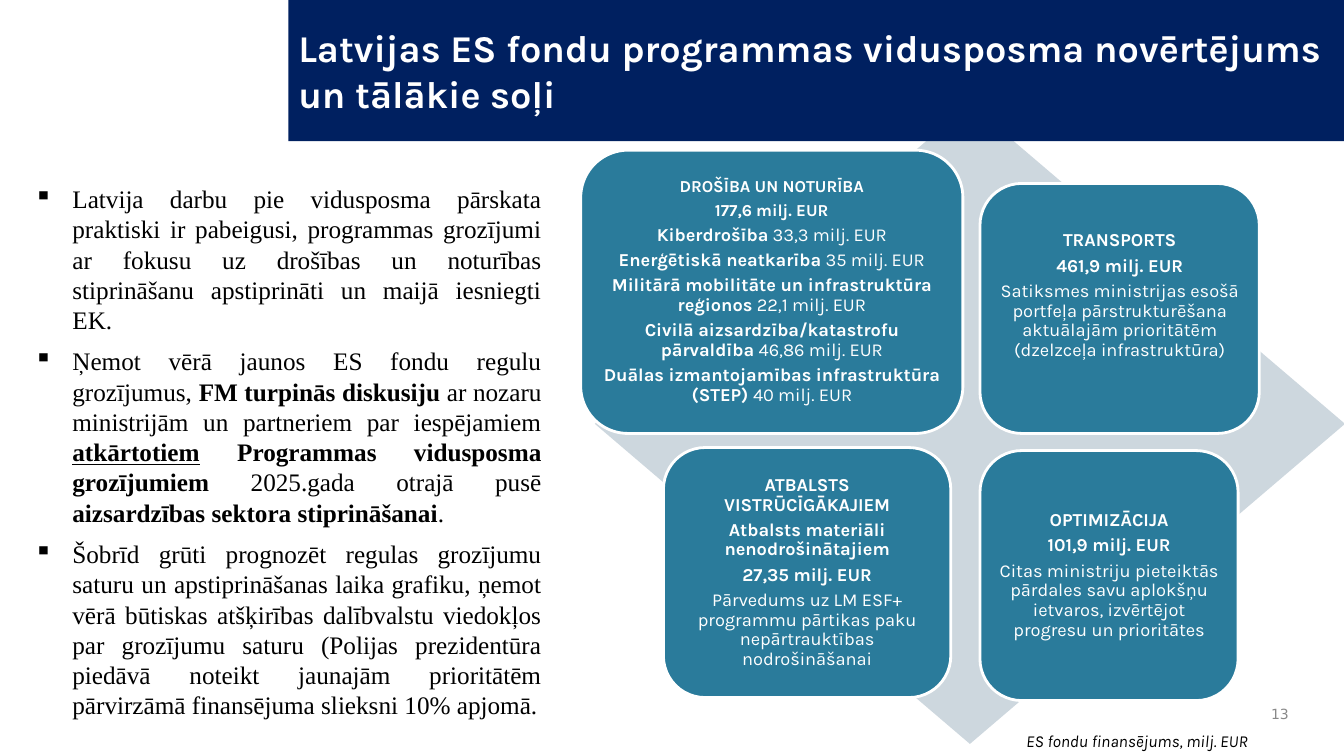
import pptx
import pptx.util
import pptx.dml.color
import pptx.enum.shapes
import pptx.enum.text
import pptx.oxml.ns
from lxml import etree

Inches = pptx.util.Inches
Pt = pptx.util.Pt
RGBColor = pptx.dml.color.RGBColor
SHAPES = pptx.enum.shapes.MSO_SHAPE
ALIGN = pptx.enum.text.PP_ALIGN
MIDDLE = pptx.enum.text.MSO_ANCHOR.MIDDLE

NAVY = RGBColor(0x00, 0x20, 0x60)
TEAL = RGBColor(0x2A, 0x7B, 0x9B)
PALE = RGBColor(0xCD, 0xD7, 0xDE)
GREY = RGBColor(0x89, 0x89, 0x89)
WHITE = RGBColor(0xFF, 0xFF, 0xFF)
BLACK = RGBColor(0x00, 0x00, 0x00)

BOLD, PLAIN, UNDERLINED = "bold", "plain", "underlined"

# Each paragraph is a list of (text, style) runs.
SECURITY = [
    [("DROŠĪBA UN NOTURĪBA", BOLD)],
    [("177,6 milj. EUR", BOLD)],
    [("Kiberdrošība", BOLD), (" 33,3 milj. EUR", PLAIN)],
    [("Enerģētiskā neatkarība ", BOLD), ("35 milj. EUR", PLAIN)],
    [("Militārā mobilitāte un infrastruktūra reģionos ", BOLD), ("22,1 milj. EUR", PLAIN)],
    [("Civilā aizsardzība/katastrofu pārvaldība ", BOLD), ("46,86 milj. EUR", PLAIN)],
    [("Duālas izmantojamības infrastruktūra (STEP) ", BOLD), ("40 milj. EUR", PLAIN)],
]
TRANSPORT = [
    [("TRANSPORTS", BOLD)],
    [("461,9 milj. EUR", BOLD)],
    [("Satiksmes ministrijas esošā portfeļa pārstrukturēšana aktuālajām prioritātēm "
      "(dzelzceļa infrastruktūra)", PLAIN)],
]
SUPPORT = [
    [("ATBALSTS VISTRŪCĪGĀKAJIEM", BOLD)],
    [("Atbalsts materiāli nenodrošinātajiem", BOLD)],
    [("27,35 milj. EUR", BOLD)],
    [("Pārvedums uz LM ESF+ programmu pārtikas paku nepārtrauktības nodrošināšanai", PLAIN)],
]
OPTIMISATION = [
    [("OPTIMIZĀCIJA", BOLD)],
    [("101,9 milj. EUR", BOLD)],
    [("Citas ministriju pieteiktās pārdales savu aplokšņu ietvaros, izvērtējot progresu "
      "un prioritātes", PLAIN)],
]
PROGRESS = [
    [("Latvija darbu pie vidusposma pārskata praktiski ir pabeigusi, programmas grozījumi ar "
      "fokusu uz drošības un noturības stiprināšanu apstiprināti un maijā iesniegti EK.", PLAIN)],
    [("Ņemot vērā jaunos ES fondu regulu grozījumus, ", PLAIN),
     ("FM turpinās diskusiju ", BOLD),
     ("ar nozaru ministrijām un partneriem par iespējamiem ", PLAIN),
     ("atkārtotiem", UNDERLINED),
     (" Programmas vidusposma grozījumiem ", BOLD),
     ("2025.gada otrajā pusē ", PLAIN),
     ("aizsardzības sektora stiprināšanai", BOLD),
     (".", PLAIN)],
    [("Šobrīd grūti prognozēt regulas grozījumu saturu un apstiprināšanas laika grafiku, ņemot "
      "vērā būtiskas atšķirības dalībvalstu viedokļos par grozījumu saturu (Polijas "
      "prezidentūra piedāvā noteikt jaunajām prioritātēm pārvirzāmā finansējuma slieksni 10% "
      "apjomā.", PLAIN)],
]


def style_font(font, name, size, color):
    font.name, font.size = name, Pt(size)
    font.color.rgb = color


def add_filled(slide, preset, box, fill):
    """Add a preset shape with a plain fill, no outline and no shadow."""
    shape = slide.shapes.add_shape(preset, *map(Inches, box))
    shape.shadow.inherit = False
    shape.fill.solid()
    shape.fill.fore_color.rgb = fill
    shape.line.fill.background()
    return shape


def paragraphs_for(frame, contents):
    """Yield each paragraph of the frame once it holds its styled runs."""
    for index, runs in enumerate(contents):
        paragraph = frame.paragraphs[0] if index == 0 else frame.add_paragraph()
        for text, style in runs:
            run = paragraph.add_run()
            run.text = text
            run.font.bold = style != PLAIN
            run.font.underline = style == UNDERLINED
        yield paragraph


def add_label(slide, box, text, font_name, size, color, align=ALIGN.LEFT):
    label = slide.shapes.add_textbox(*map(Inches, box))
    frame = label.text_frame
    frame.word_wrap = True
    frame.text = text
    frame.paragraphs[0].alignment = align
    font = frame.paragraphs[0].runs[0].font
    style_font(font, font_name, size, color)
    return frame, font


def add_title(slide, box):
    banner = add_filled(slide, SHAPES.RECTANGLE, box, NAVY)
    frame = banner.text_frame
    frame.word_wrap = True
    frame.vertical_anchor = MIDDLE
    frame.text = "Latvijas ES fondu programmas vidusposma novērtējums un tālākie soļi"
    frame.paragraphs[0].alignment = ALIGN.LEFT
    font = frame.paragraphs[0].runs[0].font
    style_font(font, "Karla", 27, WHITE)
    font.bold = True


def add_card(slide, box, contents, lift=0.0):
    """Add a rounded card; lift is extra room kept free below its text."""
    card = add_filled(slide, SHAPES.ROUNDED_RECTANGLE, box, TEAL)
    card.line.color.rgb = WHITE
    card.line.width = Pt(2)
    frame = card.text_frame
    frame.word_wrap = True
    frame.vertical_anchor = MIDDLE
    frame.margin_left = frame.margin_right = frame.margin_top = Inches(0.05)
    frame.margin_bottom = Inches(0.05 + lift)
    for paragraph in paragraphs_for(frame, contents):
        paragraph.alignment = ALIGN.CENTER
        paragraph.line_spacing = 0.9
        paragraph.space_after = Pt(4)
        for run in paragraph.runs:
            style_font(run.font, "Karla", 13, WHITE)
    return frame


def add_priorities(slide, box):
    """Add the diamond with the four funding cards laid over it."""
    left, top, _, _ = box
    add_filled(slide, SHAPES.DIAMOND, box, PALE)
    security = add_card(slide, (left - 0.14, top + 0.46, 3.79, 2.81), SECURITY)
    for paragraph in security.paragraphs[:2]:
        paragraph.runs[0].font.size = Pt(12)
    right_column = left + 3.82
    add_card(slide, (right_column, top + 0.79, 2.77, 2.48), TRANSPORT, lift=0.25)
    add_card(slide, (left + 0.68, top + 3.41, 2.85, 2.48), SUPPORT)
    add_card(slide, (right_column, top + 3.44, 2.56, 2.48), OPTIMISATION)


def add_progress(slide, box):
    """Add the justified, square-bulleted column on the left."""
    frame = slide.shapes.add_textbox(*map(Inches, box)).text_frame
    frame.word_wrap = True
    for paragraph in paragraphs_for(frame, PROGRESS):
        paragraph.alignment = ALIGN.JUSTIFY
        paragraph.space_after = Pt(8)
        properties = paragraph._p.get_or_add_pPr()
        properties.set("marL", str(Inches(0.38)))
        properties.set("indent", str(-Inches(0.38)))
        bullet = etree.SubElement(properties, pptx.oxml.ns.qn("a:buChar"))
        bullet.set("char", "▪")
        for run in paragraph.runs:
            style_font(run.font, "Times New Roman", 18, BLACK)


def main():
    deck = pptx.Presentation()
    deck.slide_width, deck.slide_height = Inches(13.33), Inches(7.5)
    slide = deck.slides.add_slide(deck.slide_layouts[6])
    number, _ = add_label(slide, (12.27, 6.92, 0.61, 0.33), "13", "DejaVu Sans", 10, GREY,
                          ALIGN.RIGHT)
    number.vertical_anchor = MIDDLE
    add_priorities(slide, (5.9, 1.03, 7.44, 6.35))
    _, caption_font = add_label(slide, (10.08, 7.2, 2.57, 0.3),
                                "ES fondu finansējums, milj. EUR", "Karla", 12, BLACK)
    caption_font.italic = True
    add_title(slide, (2.86, 0, 10.48, 1.4))
    add_progress(slide, (0.24, 1.77, 5.23, 5.48))
    deck.save("out.pptx")


if __name__ == "__main__":
    main()
